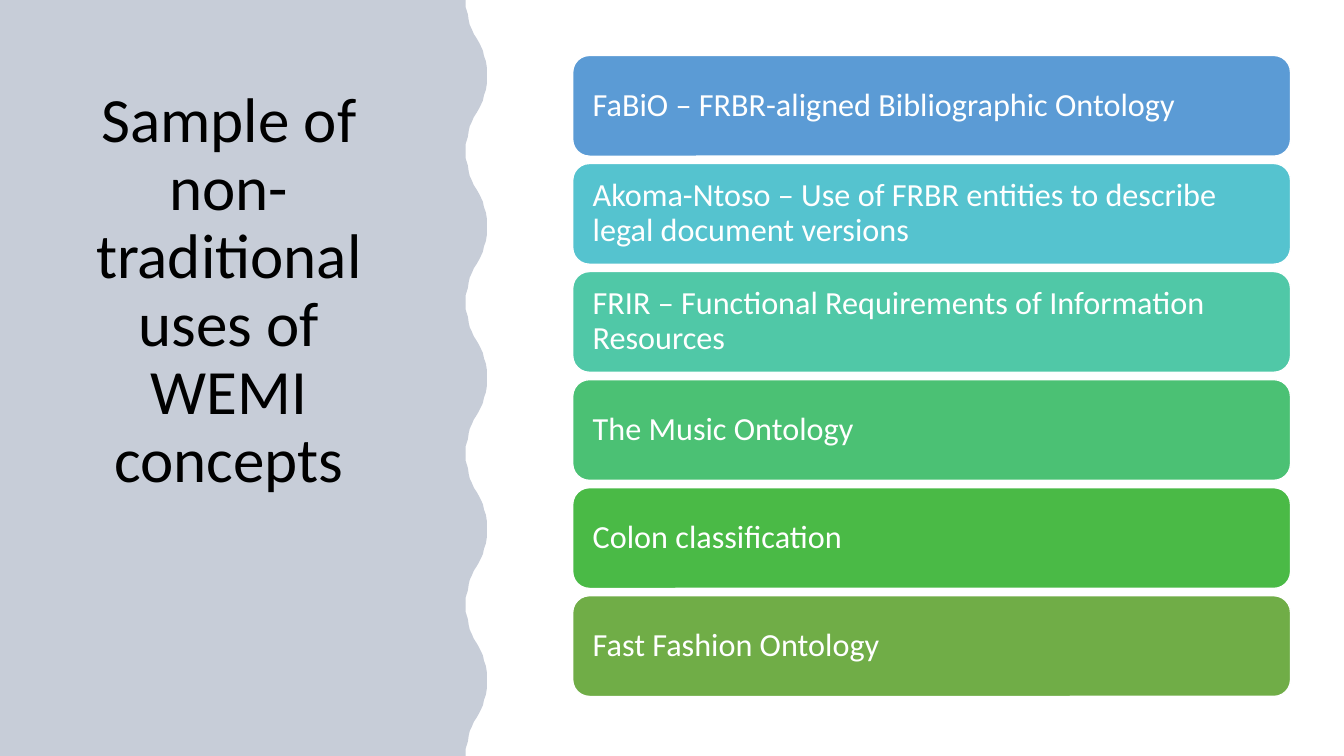
from lxml import etree
from pptx import Presentation
from pptx.dml.color import RGBColor
from pptx.enum import shapes, text
from pptx.oxml import ns
from pptx.util import Inches, Pt

FONT = "Calibri"
TITLE = "Sample of non-traditional uses of WEMI concepts"
USES = [
    ("FaBiO – FRBR-aligned Bibliographic Ontology", "5B9BD5"),
    ("Akoma-Ntoso – Use of FRBR entities to describe legal document versions", "55C3CF"),
    ("FRIR – Functional Requirements of Information Resources", "50C8A7"),
    ("The Music Ontology", "4BC174"),
    ("Colon classification", "4ABA46"),
    ("Fast Fashion Ontology", "70AD47"),
]
# Half a wave from trough to crest: share of the width, share of the length
HALF_WAVE = [(0, 0), (0, 0.1), (0.1, 0.19), (0.14, 0.27), (0.19, 0.33),
             (0.29, 0.39), (0.38, 0.45), (0.52, 0.51), (0.62, 0.56),
             (0.71, 0.61), (0.81, 0.67), (0.86, 0.74), (0.95, 0.81),
             (1, 0.9), (1, 1)]


def color(hex_string):
    return RGBColor.from_string(hex_string)


def set_fill(shape, hex_string):
    shape.shadow.inherit = False
    shape.fill.solid()
    shape.fill.fore_color.rgb = color(hex_string)


def write_text(shape, content, size, hex_string, align, frame_format):
    frame = shape.text_frame
    for name, value in {"word_wrap": True, **frame_format}.items():
        setattr(frame, name, value)
    paragraph = frame.paragraphs[0]
    paragraph.alignment = align
    paragraph.line_spacing = 0.9
    run = paragraph.add_run()
    run.text = content
    for name, value in {"name": FONT, "size": Pt(size)}.items():
        setattr(run.font, name, value)
    run.font.color.rgb = color(hex_string)


def add_wavy_panel(slide, left, top, width, height, depth=0.21, halves=10):
    """Translucent panel whose right edge runs in waves."""
    step = height / halves
    trough = left + width - depth
    edge = []
    for half in range(halves):
        rising = half % 2 == 0
        profile = HALF_WAVE if rising else [(x, 1 - y) for x, y in reversed(HALF_WAVE)]
        edge += [(trough + depth * x, top + step * (half + y)) for x, y in profile]
    points = [(Inches(x), Inches(y)) for x, y in edge + [(left, top + height)]]
    builder = slide.shapes.build_freeform(Inches(left), Inches(top))
    builder.add_line_segments(points, close=True)
    panel = builder.convert_to_shape()
    set_fill(panel, "203864")
    panel.line.fill.background()
    # Transparency
    fill_color = panel.fill._xPr.find(".//" + ns.qn("a:srgbClr"))
    etree.SubElement(fill_color, ns.qn("a:alpha")).set("val", "25000")


def add_title(slide, left, top, width, height):
    box = slide.shapes.add_textbox(*map(Inches, (left, top, width, height)))
    write_text(box, TITLE, 45, "000000", text.PP_ALIGN.CENTER,
               {"vertical_anchor": text.MSO_ANCHOR.BOTTOM})


def add_use_bars(slide, left, top, width, height, bar_height=1):
    """Rounded bars, evenly spread over the height."""
    pitch = (height - bar_height) / (len(USES) - 1)
    frame_format = {"vertical_anchor": text.MSO_ANCHOR.MIDDLE,
                    "margin_left": Inches(0.15), "margin_right": Inches(0.14)}
    for index, (label, fill) in enumerate(USES):
        bar = slide.shapes.add_shape(
            shapes.MSO_SHAPE.ROUNDED_RECTANGLE, Inches(left),
            Inches(top + index * pitch), Inches(width), Inches(bar_height))
        set_fill(bar, fill)
        bar.line.color.rgb = color("FFFFFF")
        bar.line.width = Pt(1)
        write_text(bar, label, 23, "FFFFFF", text.PP_ALIGN.LEFT, frame_format)


def main():
    presentation = Presentation()
    presentation.slide_width = Inches(13.33)
    presentation.slide_height = Inches(7.5)
    slide = presentation.slides.add_slide(presentation.slide_layouts[6])
    add_wavy_panel(slide, 0, 0, 4.83, 7.5)
    add_title(slide, 0.5, 0.79, 3.54, 4.18)
    add_use_bars(slide, 5.68, 0.55, 7.12, 6.36)
    presentation.save("out.pptx")


if __name__ == "__main__":
    main()
